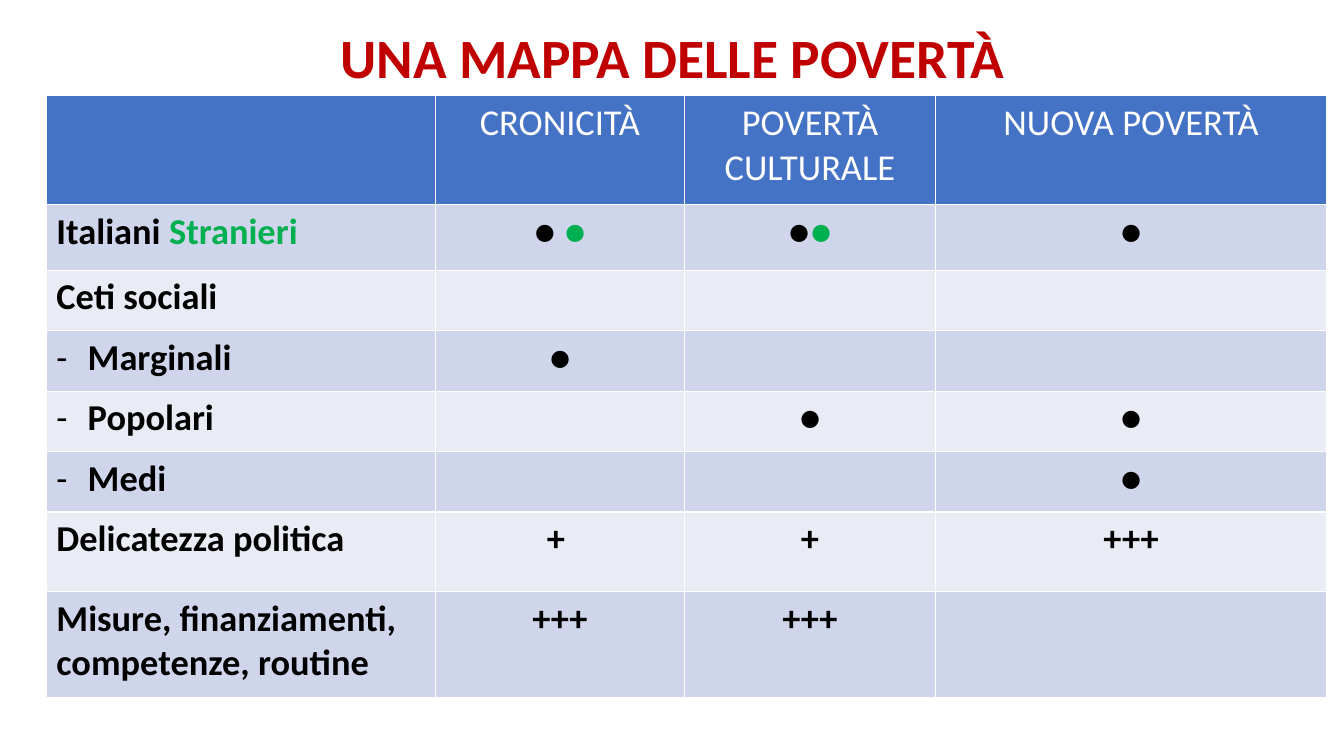
from lxml.etree import SubElement
from pptx import Presentation
from pptx.dml.color import RGBColor
from pptx.enum.text import MSO_ANCHOR, PP_ALIGN
from pptx.oxml.ns import qn
from pptx.util import Inches, Pt

FONT = "Calibri"
BLACK, WHITE, RED, GREEN = "000000", "FFFFFF", "C00000", "00B050"
HEADER_FILL, BAND_FILLS = "4472C4", ("CFD5EA", "E9EBF5")

# Content: a cell is a list of (text, colour) runs, or plain black text
TITLE = "UNA MAPPA DELLE POVERTÀ"
HEADINGS = ["", "CRONICITÀ", "POVERTÀ CULTURALE", "NUOVA POVERTÀ"]
GROUPS = [
    [[("Italiani ", BLACK), ("Stranieri", GREEN)],
     [("● ", BLACK), ("●", GREEN)], [("●", BLACK), ("●", GREEN)], "●"],
    ["Ceti sociali", "", "", ""],
    ["Marginali", "●", "", ""],
    ["Popolari", "", "●", "●"],
    ["Medi", "", "", "●"],
    ["Delicatezza politica", "+ ", "+", "+++"],
    ["Misure, finanziamenti, competenze, routine", "+++", "+++", ""],
]
SOCIAL_CLASSES = {"Marginali", "Popolari", "Medi"}

# Layout in inches
SLIDE_W, SLIDE_H = 13.33, 7.5
TITLE_BOX = (0.92, 0.4, 11.5, 0.41)
TABLE_LEFT, TABLE_TOP = 0.46, 0.95
COLUMNS = [3.86, 2.47, 2.49, 3.88]
ROWS = [1.08, 0.65, 0.6, 0.6, 0.6, 0.6, 0.79, 1.05]
DASH_INDENT = Inches(0.31)


def rgb(value):
    return RGBColor.from_string(value)


def write(paragraph, runs, size, bold, align):
    paragraph.alignment = align
    font = paragraph.font
    font.name, font.size, font.bold = FONT, Pt(size), bold
    for text, colour in runs:
        run = paragraph.add_run()
        run.text = text
        run.font.color.rgb = rgb(colour)
        # Table styles would otherwise override the paragraph's weight and size
        run.font.name, run.font.size, run.font.bold = FONT, Pt(size), bold


def add_dash(paragraph):
    properties = paragraph._p.get_or_add_pPr()
    properties.set("marL", str(DASH_INDENT))
    properties.set("indent", str(-DASH_INDENT))
    bullet_font = SubElement(properties, qn("a:buFont"))
    bullet_font.set("typeface", FONT)
    SubElement(properties, qn("a:buChar")).set("char", "-")
    # Bullet settings come before the default run properties
    defaults = properties.find(qn("a:defRPr"))
    if defaults is not None:
        properties.append(defaults)


def add_title(slide):
    frame = slide.shapes.add_textbox(*map(Inches, TITLE_BOX)).text_frame
    frame.word_wrap = True
    frame.vertical_anchor = MSO_ANCHOR.MIDDLE
    heading = frame.paragraphs[0]
    heading.line_spacing = 0.9
    write(heading, [(TITLE, RED)], 39.6, True, PP_ALIGN.CENTER)


def add_map(slide):
    poverty_map = slide.shapes.add_table(
        len(ROWS), len(COLUMNS), Inches(TABLE_LEFT), Inches(TABLE_TOP),
        Inches(sum(COLUMNS)), Inches(sum(ROWS))).table
    for column, width in zip(poverty_map.columns, COLUMNS):
        column.width = Inches(width)
    for row, height in zip(poverty_map.rows, ROWS):
        row.height = Inches(height)

    for r, entries in enumerate([HEADINGS] + GROUPS):
        is_header = r == 0
        fill = HEADER_FILL if is_header else BAND_FILLS[(r - 1) % 2]
        for c, entry in enumerate(entries):
            cell = poverty_map.cell(r, c)
            cell.fill.solid()
            cell.fill.fore_color.rgb = rgb(fill)
            if not entry:
                continue
            if isinstance(entry, str):
                runs = [(entry, WHITE if is_header else BLACK)]
            else:
                runs = entry
            paragraph = cell.text_frame.paragraphs[0]
            write(paragraph, runs, 26, not is_header,
                  PP_ALIGN.CENTER if c else PP_ALIGN.LEFT)
            if c == 0 and runs[0][0] in SOCIAL_CLASSES:
                add_dash(paragraph)


def main():
    deck = Presentation()
    deck.slide_width, deck.slide_height = Inches(SLIDE_W), Inches(SLIDE_H)
    slide = deck.slides.add_slide(deck.slide_layouts[6])
    add_title(slide)
    add_map(slide)
    deck.save("out.pptx")


if __name__ == "__main__":
    main()
